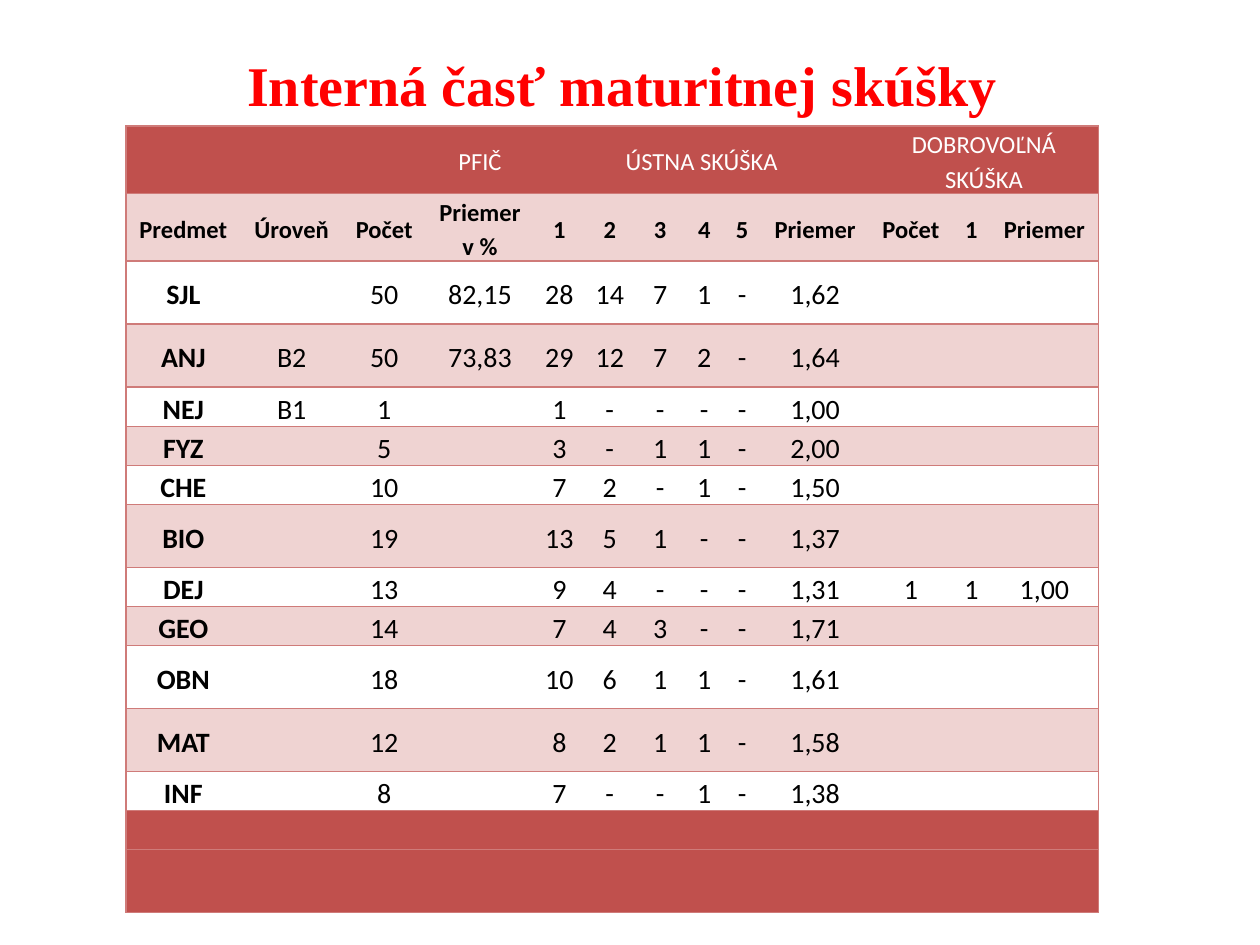
from dataclasses import dataclass

from lxml.etree import SubElement
from pptx import Presentation
from pptx.dml.color import RGBColor
from pptx.enum.text import MSO_ANCHOR, PP_ALIGN
from pptx.oxml.ns import qn
from pptx.table import Table, _Cell
from pptx.util import Inches, Pt

COLORS = {
    "title": "FF0000", "header": "C0504D", "band": "EFD3D2",
    "line": "CF7B79", "light": "FFFFFF", "dark": "000000",
}
PLAIN_TABLE_STYLE = "{2D5ABB26-0587-4C30-8999-92F81FD0307C}"
TALL, LOW = 0.5, 0.31
COLUMN_WIDTHS = [0.91, 0.81, 0.66, 0.86, 0.4, 0.4, 0.4, 0.3, 0.3, 0.86, 0.66, 0.3, 0.86]


@dataclass
class Row:
    texts: dict[int, str]  # column index -> text
    height: float = LOW
    fill: str | None = None
    color: str = "dark"
    size: int = 16
    all_bold: bool = False


@dataclass
class Subject:
    name: str
    count: str
    grades: str  # numbers of grades 1 to 5
    average: str
    level: str = ""
    written: str = ""
    voluntary: tuple[str, str, str] = ("", "", "")
    height: float = LOW

    def texts(self) -> dict[int, str]:
        return dict(enumerate([self.name, self.level, self.count, self.written,
                               *self.grades.split(), self.average, *self.voluntary]))


SUBJECTS = [
    Subject("SJL", "50", "28 14 7 1 -", "1,62", written="82,15", height=TALL),
    Subject("ANJ", "50", "29 12 7 2 -", "1,64", "B2", "73,83", height=TALL),
    Subject("NEJ", "1", "1 - - - -", "1,00", "B1"),
    Subject("FYZ", "5", "3 - 1 1 -", "2,00"),
    Subject("CHE", "10", "7 2 - 1 -", "1,50"),
    Subject("BIO", "19", "13 5 1 - -", "1,37", height=TALL),
    Subject("DEJ", "13", "9 4 - - -", "1,31", voluntary=("1", "1", "1,00")),
    Subject("GEO", "14", "7 4 3 - -", "1,71"),
    Subject("OBN", "18", "10 6 1 1 -", "1,61", height=TALL),
    Subject("MAT", "12", "8 2 1 1 -", "1,58", height=TALL),
    Subject("INF", "8", "7 - - 1 -", "1,38"),
]
HEADINGS = ["Predmet", "Úroveň", "Počet", "Priemer v %", "1", "2", "3", "4", "5",
            "Priemer", "Počet", "1", "Priemer"]
ROWS = [
    Row({3: "PFIČ", 4: "ÚSTNA SKÚŠKA", 10: "DOBROVOĽNÁ SKÚŠKA"}, TALL, "header", "light", 14),
    Row(dict(enumerate(HEADINGS)), TALL, "band", size=14, all_bold=True),
    *(Row(subject.texts(), subject.height, "band" if i % 2 else None)
      for i, subject in enumerate(SUBJECTS)),
    Row({}, LOW, "header"),
    Row({}, TALL, "header"),
]
HEADER_SPANS = {4: 6, 10: 3}  # first column -> columns covered


def rgb(name: str) -> RGBColor:
    return RGBColor.from_string(COLORS[name])


def draw_borders(cell: _Cell, sides: str) -> None:
    properties = cell._tc.get_or_add_tcPr()
    for side in sides:
        line = SubElement(properties, qn(f"a:ln{side}"), w=str(Pt(1)))
        fill = SubElement(line, qn("a:solidFill"))
        SubElement(fill, qn("a:srgbClr"), val=COLORS["line"])


def write_cell(cell: _Cell, text: str, row: Row, bold: bool) -> None:
    cell.text_frame.text = text
    paragraph = cell.text_frame.paragraphs[0]
    paragraph.alignment = PP_ALIGN.CENTER
    paragraph.line_spacing = 1.15
    font = paragraph.runs[0].font
    font.name, font.size, font.bold = "Calibri", Pt(row.size), bold
    font.color.rgb = rgb(row.color)


def draw_row(table: Table, index: int, row: Row) -> None:
    table.rows[index].height = Inches(row.height)
    last = len(COLUMN_WIDTHS) - 1
    for column in range(last + 1):
        cell = table.cell(index, column)
        cell.margin_left = cell.margin_right = Inches(0.07)
        cell.margin_top = cell.margin_bottom = 0
        cell.vertical_anchor = MSO_ANCHOR.MIDDLE
        end = column + (cell.span_width if cell.is_merge_origin else 1) - 1
        draw_borders(cell, ("L" if column == 0 else "") + ("R" if end == last else "") + "TB")
        if row.fill:
            cell.fill.solid()
            cell.fill.fore_color.rgb = rgb(row.fill)
        else:
            cell.fill.background()
        if row.texts.get(column):
            write_cell(cell, row.texts[column], row, row.all_bold or column == 0)


def main() -> None:
    prs = Presentation()
    prs.slide_width, prs.slide_height = Inches(10), Inches(7.5)
    slide = prs.slides.add_slide(prs.slide_layouts[6])

    # Title
    title = slide.shapes.add_textbox(Inches(0.5), Inches(0.3), Inches(9), Inches(0.62)).text_frame
    title.word_wrap = True
    title.vertical_anchor = MSO_ANCHOR.MIDDLE
    title.margin_top, title.margin_right = Inches(0.17), Inches(0.22)
    title.text = "Interná časť maturitnej skúšky"
    title.paragraphs[0].alignment = PP_ALIGN.CENTER
    font = title.paragraphs[0].runs[0].font
    font.name, font.size, font.bold = "Times New Roman", Pt(32), True
    font.color.rgb = rgb("title")

    # Results table
    results = slide.shapes.add_table(len(ROWS), len(COLUMN_WIDTHS), Inches(1), Inches(1),
                                     Inches(7.7), Inches(6.21)).table
    results._tbl.tblPr.find(qn("a:tableStyleId")).text = PLAIN_TABLE_STYLE
    results.first_row = results.horz_banding = False
    for column, width in zip(results.columns, COLUMN_WIDTHS):
        column.width = Inches(width)
    for start, span in HEADER_SPANS.items():
        results.cell(0, start).merge(results.cell(0, start + span - 1))
    for index, row in enumerate(ROWS):
        draw_row(results, index, row)

    prs.save("out.pptx")


if __name__ == "__main__":
    main()
